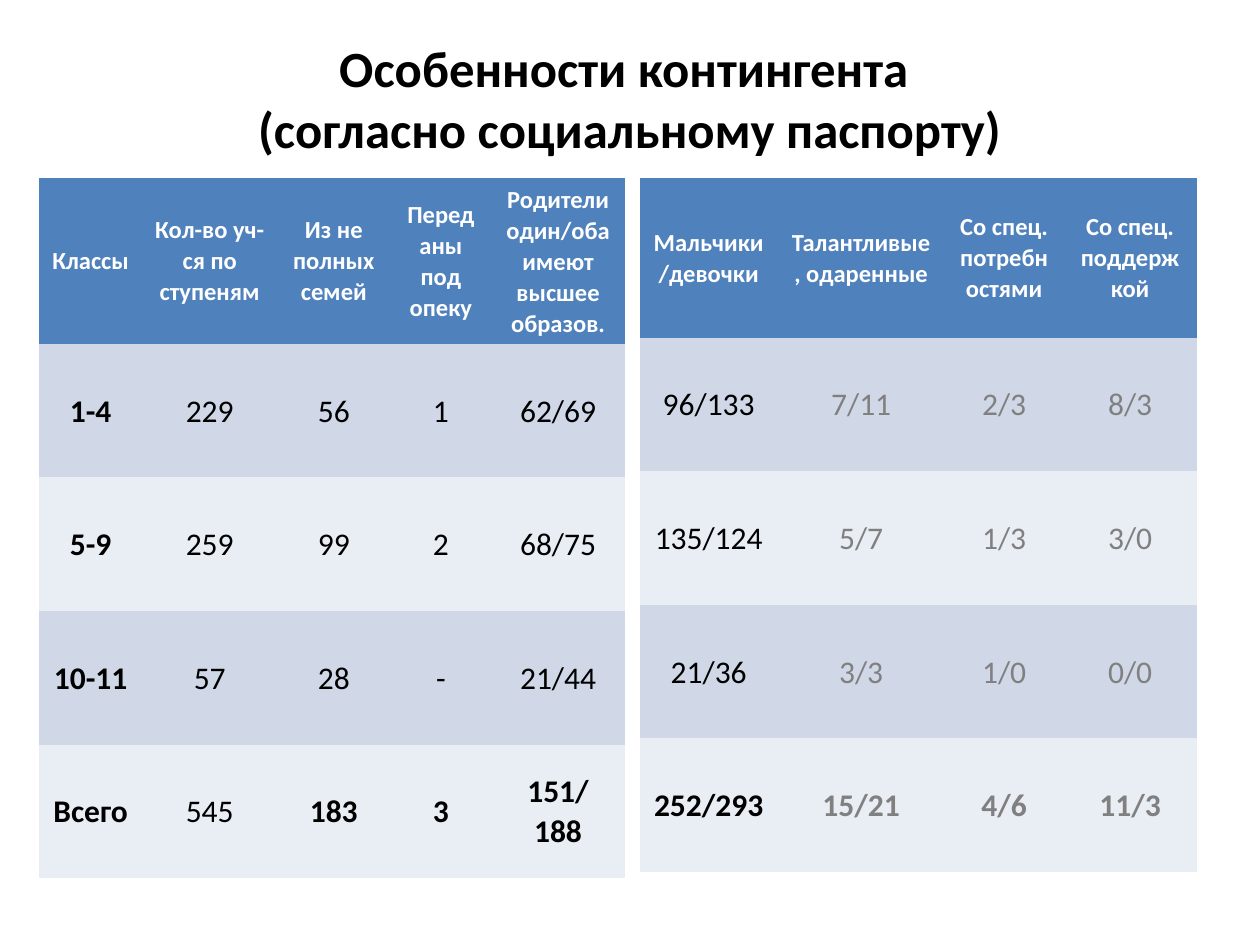
from dataclasses import dataclass

from pptx import Presentation
from pptx.dml.color import RGBColor
from pptx.enum.text import MSO_ANCHOR, PP_ALIGN
from pptx.oxml.ns import qn
from pptx.slide import Slide
from pptx.table import _Cell as Cell
from pptx.text.text import TextFrame
from pptx.util import Inches, Pt

MIDDLE = MSO_ANCHOR.MIDDLE
CENTER = PP_ALIGN.CENTER
FONT = "Calibri"
COLORS = {
    "head": "4F81BD",
    "odd": "D0D8E8",
    "even": "E9EDF4",
    "white": "FFFFFF",
    "black": "000000",
    "gray": "808080",
}
NO_GRID = "{2D5ABB26-0587-4C30-8999-92F81FD0307C}"
TOP = 1.41
ROW = 1.06


@dataclass(frozen=True)
class Grid:
    left: float
    head: float
    cols: list[float]
    rows: list[list[str]]
    bold: tuple[int, ...] = ()
    plain: tuple[int, ...] = ()
    gray: tuple[int, ...] = ()


GRIDS = [
    Grid(
        0.31, 1.32, [0.82, 1.07, 0.9, 0.8, 1.06],
        [
            ["Классы", "Кол-во уч-ся по ступеням", "Из не полных семей",
             "Переданы под опеку", "Родители один/оба имеют высшее образов."],
            ["1-4", "229", "56", "1", "62/69"],
            ["5-9", "259", "99", "2", "68/75"],
            ["10-11", "57", "28", "-", "21/44"],
            ["Всего", "545", "183", "3", "151/ 188"],
        ],
        bold=(0,), plain=(1,),
    ),
    Grid(
        5.08, 1.27, [1.09, 1.33, 0.94, 1.06],
        [
            ["Мальчики/девочки", "Талантливые , одаренные",
             "Со спец. потребностями", "Со спец. поддержкой"],
            ["96/133", "7/11", "2/3", "8/3"],
            ["135/124", "5/7", "1/3", "3/0"],
            ["21/36", "3/3", "1/0", "0/0"],
            ["252/293", "15/21", "4/6", "11/3"],
        ],
        gray=(1, 2, 3),
    ),
]


def write(frame: TextFrame, text: str, size: int, color: str, bold: bool) -> None:
    frame.text = text
    para = frame.paragraphs[0]
    para.alignment = CENTER
    font = para.font
    font.name = FONT
    font.size = Pt(size)
    font.bold = bold
    font.color.rgb = RGBColor.from_string(COLORS[color])


def fill_cell(cell: Cell, grid: Grid, row: int, col: int) -> None:
    head = row == 0
    last = row == len(grid.rows) - 1
    plain = col in grid.plain and not head
    bold = head or col in grid.bold or (last and not plain)
    color = "white" if head else "gray" if col in grid.gray else "black"
    write(cell.text_frame, grid.rows[row][col], 14 if head else 18, color, bold)
    cell.text_frame.paragraphs[0].line_spacing = 1.04
    cell.vertical_anchor = MIDDLE
    cell.margin_left = cell.margin_right = Inches(0.08 if plain else 0.1)
    cell.margin_top = cell.margin_bottom = Inches(0 if plain else 0.05)
    band = "head" if head else "odd" if row % 2 else "even"
    cell.fill.solid()
    cell.fill.fore_color.rgb = RGBColor.from_string(COLORS[band])


def draw_grid(slide: Slide, grid: Grid) -> None:
    count = len(grid.rows)
    high = grid.head + ROW * (count - 1)
    frame = slide.shapes.add_table(
        count, len(grid.cols), Inches(grid.left), Inches(TOP),
        Inches(sum(grid.cols)), Inches(high),
    )
    for style in frame.element.iter(qn("a:tableStyleId")):
        style.text = NO_GRID
    table = frame.table
    for col, width in enumerate(grid.cols):
        table.columns[col].width = Inches(width)
    for row in range(count):
        table.rows[row].height = Inches(ROW if row else grid.head)
        for col in range(len(grid.cols)):
            fill_cell(table.cell(row, col), grid, row, col)


def draw_title(slide: Slide) -> None:
    box = slide.shapes.add_textbox(Inches(0.5), Inches(0.24), Inches(9), Inches(1.07))
    frame = box.text_frame
    frame.word_wrap = True
    frame.vertical_anchor = MIDDLE
    text = "Особенности контингента \v(согласно социальному паспорту)"
    write(frame, text, 29, "black", True)


def main() -> None:
    deck = Presentation()
    deck.slide_width = Inches(10)
    deck.slide_height = Inches(7.5)
    slide = deck.slides.add_slide(deck.slide_layouts[6])
    draw_title(slide)
    for grid in GRIDS:
        draw_grid(slide, grid)
    deck.save("out.pptx")


if __name__ == "__main__":
    main()
